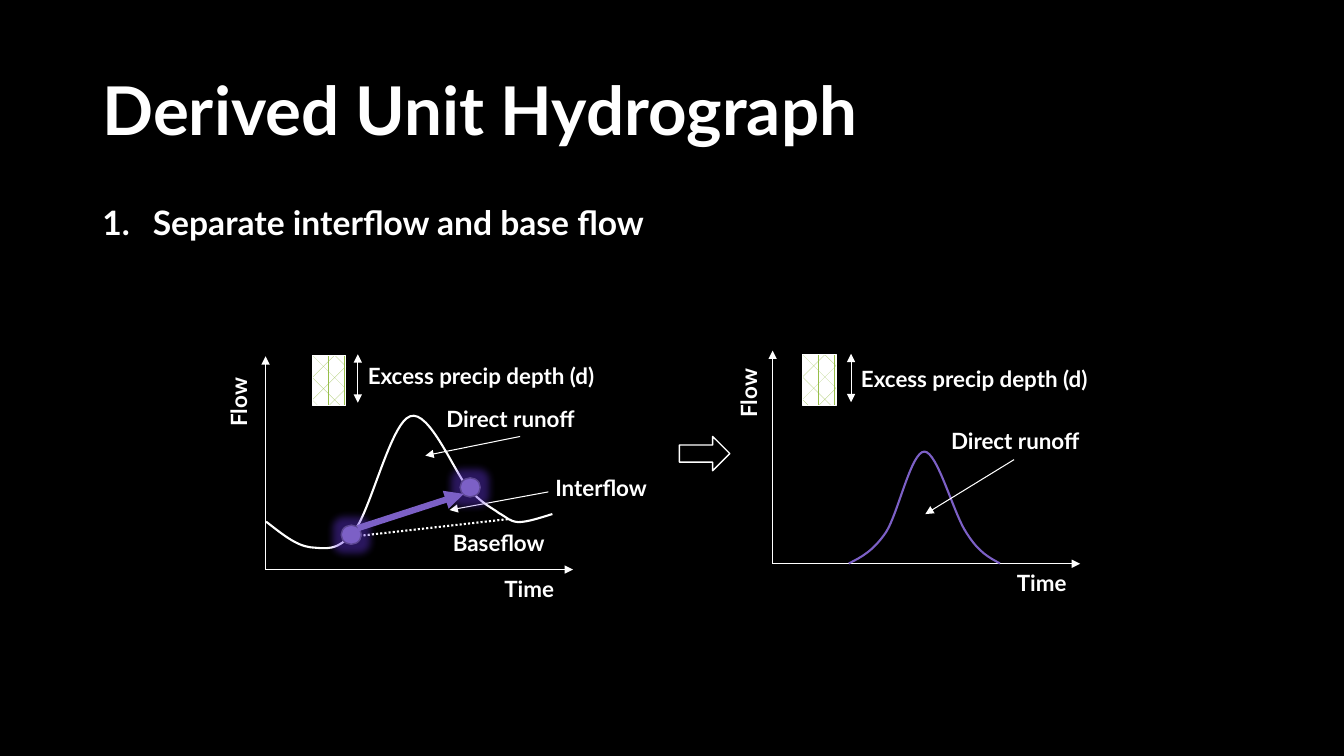
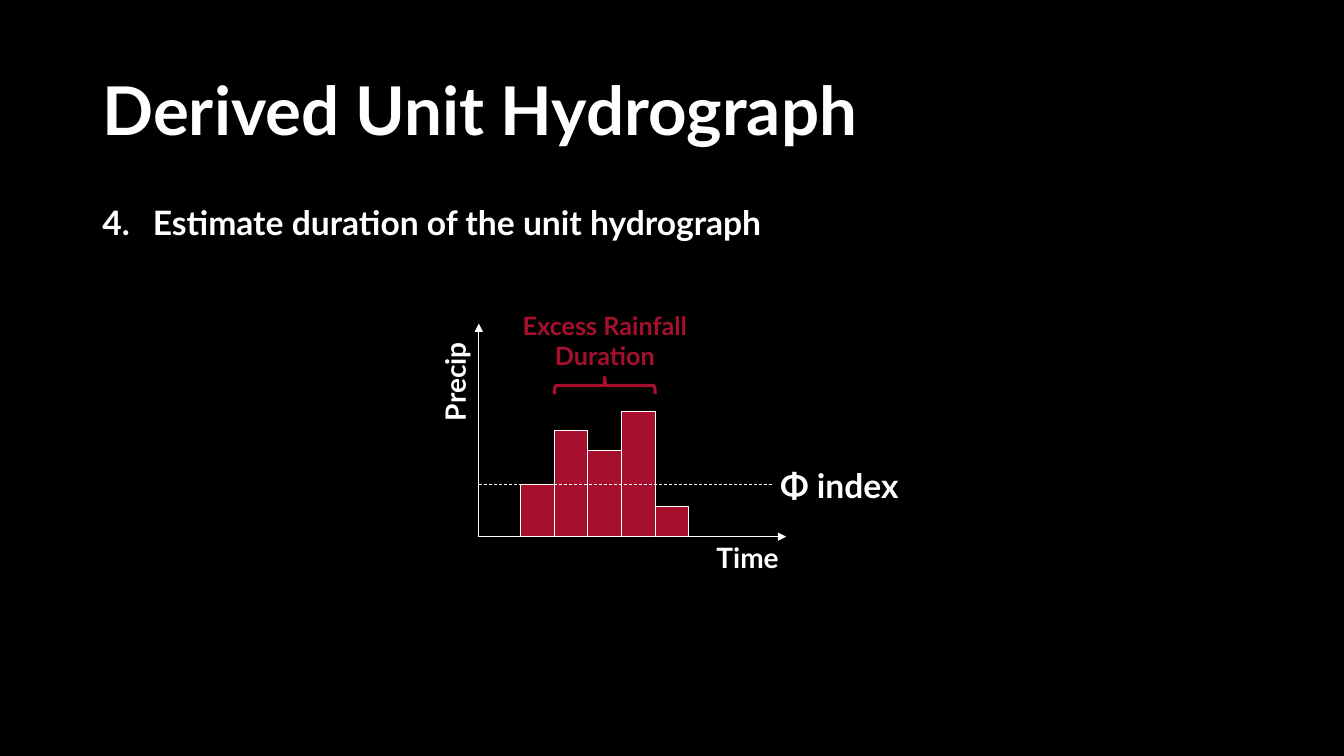
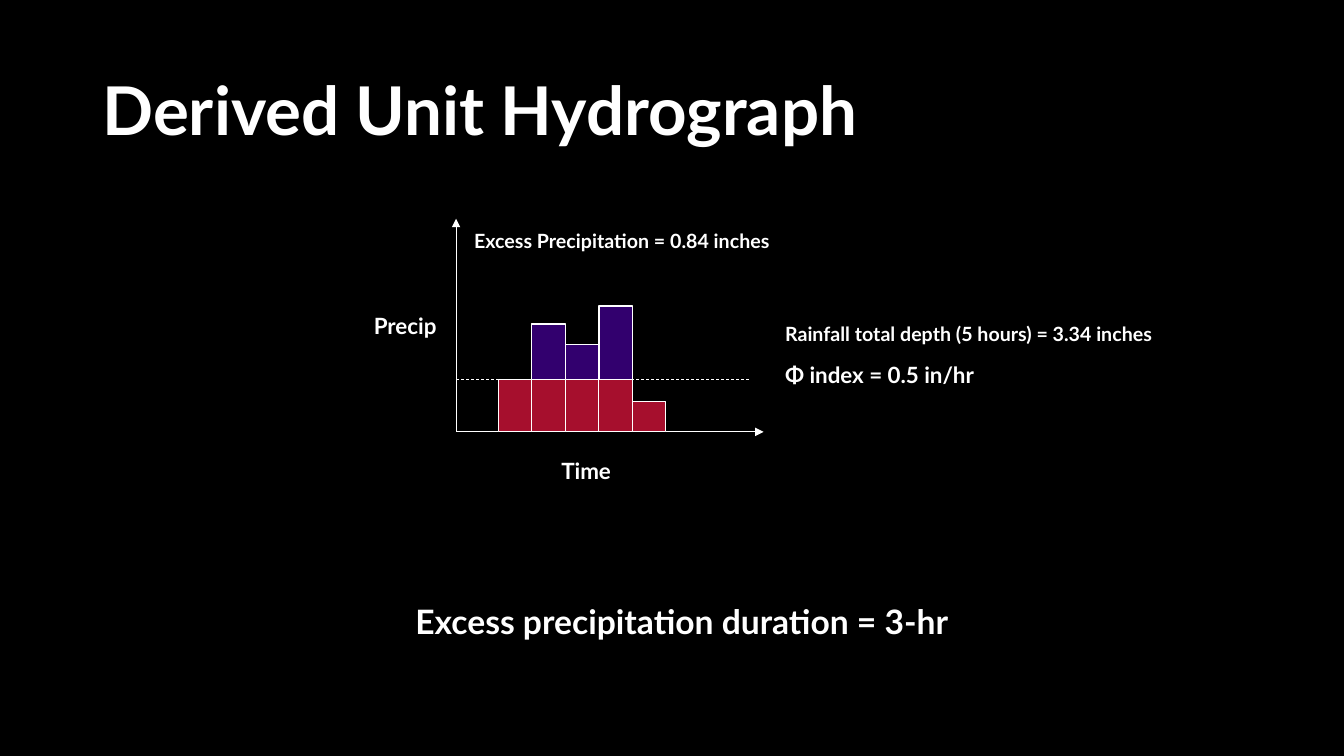
from lxml import etree
from pptx import Presentation
from pptx.dml.color import RGBColor
from pptx.enum.dml import MSO_LINE, MSO_PATTERN
from pptx.enum.shapes import MSO_CONNECTOR, MSO_SHAPE
from pptx.enum.text import MSO_ANCHOR, PP_ALIGN
from pptx.oxml.ns import qn
from pptx.util import Inches, Pt

BLACK = RGBColor(0x00, 0x00, 0x00)
WHITE = RGBColor(0xFF, 0xFF, 0xFF)
LEAF = RGBColor(0x97, 0xBE, 0x49)
LILAC = RGBColor(0x7C, 0x60, 0xC6)
PLUM = RGBColor(0x5C, 0x47, 0x92)
CRIMSON = RGBColor(0xA6, 0x0F, 0x2D)
PURPLE = RGBColor(0x32, 0x00, 0x6E)

STRAIGHT = MSO_CONNECTOR.STRAIGHT
RECT, DOT = MSO_SHAPE.RECTANGLE, MSO_SHAPE.OVAL
BLOCK_ARROW, BRACE = MSO_SHAPE.RIGHT_ARROW, MSO_SHAPE.RIGHT_BRACE
DASH, DOTTED = MSO_LINE.DASH, MSO_LINE.ROUND_DOT
DIVOT = MSO_PATTERN.DIVOT
LEFT, CENTER = PP_ALIGN.LEFT, PP_ALIGN.CENTER
TOP, MIDDLE = MSO_ANCHOR.TOP, MSO_ANCHOR.MIDDLE

COLUMNS, ROWS = 133.33, 75
AXIS_UP, AXIS_RIGHT = 21.15, 30.5
BAR_WIDTH, BAR_START = 3.33, 4.17
RAIN = [5.2, 10.5, 8.6, 12.4, 3.0]
PHI = 5.2


class HydrographDeck:
    """Draws hydrograph slides on a grid of 133.33 columns and 75 rows."""

    def __init__(self):
        self.prs = Presentation()
        self.prs.slide_width, self.prs.slide_height = Inches(13.33), Inches(7.5)
        backdrop = self.prs.slide_master.background.fill
        backdrop.solid()
        backdrop.fore_color.rgb = BLACK
        self.slide = None

    def grid(self, *lengths):
        width, height = self.prs.slide_width, self.prs.slide_height
        steps = (width / COLUMNS, height / ROWS)
        return [round(length * steps[i % 2]) for i, length in enumerate(lengths)]

    def add_slide(self, title):
        self.slide = self.prs.slides.add_slide(self.prs.slide_layouts[6])
        self.text(title, 9.17, 4, 115, 14.5, size=48, anchor=MIDDLE, spacing=0.9)

    def text(self, words, x, y, w, h, size=16, color=WHITE, align=LEFT,
             anchor=TOP, spacing=1.0, turn=0):
        box = self.slide.shapes.add_textbox(*self.grid(x, y, w, h))
        box.rotation = turn
        frame = box.text_frame
        frame.word_wrap, frame.vertical_anchor = True, anchor
        paragraph = frame.paragraphs[0]
        paragraph.alignment, paragraph.line_spacing = align, spacing
        run = paragraph.add_run()
        run.text = words
        font_format = {"name": "Lato", "size": Pt(size), "bold": True}
        for attribute, value in font_format.items():
            setattr(run.font, attribute, value)
        run.font.color.rgb = color
        return paragraph

    def step(self, number, words):
        paragraph = self.text(words, 9.17, 20, 115, 47.6, size=24, spacing=0.9)
        properties = paragraph._p.get_or_add_pPr()
        indent = Inches(0.5)
        properties.set("marL", str(indent))
        properties.set("indent", str(-indent))
        etree.SubElement(properties, qn("a:buFont"), typeface="Lato")
        etree.SubElement(properties, qn("a:buAutoNum"), type="arabicPeriod",
                         startAt=str(number))

    def outline(self, line, color, width):
        line.color.rgb = color
        line.width = Pt(width)

    def line(self, x1, y1, x2, y2, color=WHITE, width=0.75, dash=None, ends=()):
        link = self.slide.shapes.add_connector(STRAIGHT, *self.grid(x1, y1, x2, y2))
        self.outline(link.line, color, width)
        if dash:
            link.line.dash_style = dash
        for end in ends:
            etree.SubElement(link.line._get_or_add_ln(), qn(f"a:{end}End"), type="triangle")
        etree.SubElement(link._element.spPr, qn("a:effectLst"))

    def arrow(self, *ends, **style):
        self.line(*ends, ends=("tail",), **style)

    def shape(self, kind, x, y, w, h, fill=None, color=WHITE, width=0.75, turn=0):
        figure = self.slide.shapes.add_shape(kind, *self.grid(x, y, w, h))
        figure.rotation = turn
        figure.shadow.inherit = False
        self.outline(figure.line, color, width)
        if fill is None:
            figure.fill.background()
        else:
            figure.fill.solid()
            figure.fill.fore_color.rgb = fill
        return figure

    def glowing_dot(self, x, y):
        dot = self.shape(DOT, x, y, 2, 1.9, LILAC, PLUM, 1)
        effects = dot._element.spPr.find(qn("a:effectLst"))
        glow = etree.SubElement(effects, qn("a:glow"), rad=str(Pt(11)))
        tint = etree.SubElement(glow, qn("a:srgbClr"), val=str(LILAC))
        for adjustment, share in (("satMod", "175000"), ("alpha", "40000")):
            etree.SubElement(tint, qn(f"a:{adjustment}"), val=share)

    def curve(self, start, controls, color):
        builder = self.slide.shapes.build_freeform(*self.grid(*start), scale=1.0)
        builder.add_line_segments([self.grid(*point) for point in controls], close=False)
        flow = builder.convert_to_shape()
        segments = list(flow._element.iter(qn("a:lnTo")))
        for first in range(0, len(segments), 3):
            trio = segments[first:first + 3]
            bezier = etree.Element(qn("a:cubicBezTo"))
            trio[0].addprevious(bezier)
            for segment in trio:
                bezier.append(segment[0])
                segment.getparent().remove(segment)
        flow.fill.background()
        flow.shadow.inherit = False
        self.outline(flow.line, color, 1.5)

    def axes(self, x, base):
        self.arrow(x, base, x, base - AXIS_UP)
        self.arrow(x, base, x + AXIS_RIGHT, base)

    def flow_axes(self, x, base, flow_box, time_box):
        self.axes(x, base)
        self.text("Flow", *flow_box, 7.7, 3.7, turn=270)
        self.text("Time", *time_box, 15.8, 3.7, align=CENTER)

    def precip_depth(self, x, y, arrow_x, label_y):
        block = self.shape(RECT, x, y, 3.33, 5)
        block.fill.patterned()
        block.fill.pattern = DIVOT
        block.fill.fore_color.rgb, block.fill.back_color.rgb = LEAF, WHITE
        self.line(arrow_x, y - 0.1, arrow_x, y + 4.7, ends=("head", "tail"))
        self.text("Excess precip depth (d)", arrow_x, label_y, 25.3, 3.7)

    def bars(self, x, base, heights, fill, width=0.75):
        for i, height in enumerate(heights):
            self.shape(RECT, x + i * BAR_WIDTH, base - height, BAR_WIDTH, height,
                       fill, width=width)

    def rainfall(self, x, base):
        self.axes(x, base)
        self.bars(x + BAR_START, base, RAIN, CRIMSON)
        self.line(x, base - PHI, x + 29.2, base - PHI, width=0.5, dash=DASH)


def separate_flows(deck):
    deck.add_slide("Derived Unit Hydrograph")
    deck.step(1, "Separate interflow and base flow")

    deck.flow_axes(26.35, 56.5, (19.8, 37.6), (44.6, 56.6))
    deck.precip_depth(31, 35.25, 35.5, 35.4)
    deck.text("Baseflow", 43.95, 52, 12.5, 3.7)
    deck.text("Direct runoff", 43.3, 39.7, 15.8, 3.7)
    deck.text("Interflow", 54.1, 46.5, 11.8, 3.7)
    deck.arrow(51.6, 43.3, 42.2, 45.2)
    deck.line(34.4, 53.3, 50.4, 51.5, width=1.5, dash=DOTTED)
    deck.arrow(54.4, 48.8, 44.6, 50.6)
    deck.curve((26.4, 51.75), [
        (27.9, 52.9), (29.3, 54.1), (30.8, 54.3),
        (32.3, 54.4), (33.5, 54.8), (35.2, 52.6),
        (36.8, 50.5), (38.8, 41.9), (40.7, 41.3),
        (42.6, 40.6), (45.1, 46.9), (46.5, 48.5),
        (48, 50.1), (48.7, 50.3), (49.5, 50.9),
        (50.4, 51.4), (50.5, 51.7), (51.4, 51.8),
        (52.3, 51.8), (53.5, 51.4), (54.8, 51)], WHITE)
    for x, y in ((33.85, 52.1), (45.65, 47.4)):
        deck.glowing_dot(x, y)
    deck.arrow(35.5, 52.4, 46, 49, color=LILAC, width=4.5)

    deck.shape(BLOCK_ARROW, 67.4, 43.3, 5, 3.4, BLACK, width=1)

    deck.flow_axes(76.65, 55.93, (70.4, 36.7), (95.45, 55.95))
    deck.precip_depth(79.63, 35.2, 84.43, 35.7)
    deck.curve((84.2, 55.9), [
        (85.4, 55.3), (86.6, 54.7), (87.9, 52.8),
        (89.1, 50.9), (90.4, 44.8), (91.7, 44.8),
        (93, 44.8), (94.6, 51), (95.9, 52.9),
        (97.1, 54.8), (98.1, 55.3), (99.2, 55.9)], LILAC)
    deck.text("Direct runoff", 93.37, 41.9, 15.8, 3.7)
    deck.arrow(100.6, 45.6, 91.8, 51)


def estimate_duration(deck):
    deck.add_slide("Derived Unit Hydrograph")
    deck.step(4, "Estimate duration of the unit hydrograph")
    deck.rainfall(47.5, 53.25)
    deck.text("Time", 66.27, 53.1, 15.8, 4.4, size=20, align=CENTER)
    deck.text("Precip", 39.8, 35.2, 10.7, 4.4, size=20, turn=270)
    deck.text("Φ index", 76.4, 45.6, 15.4, 5, size=24)
    deck.text("Excess Rainfall Duration", 50.55, 30.25, 18.9, 7.1, size=18,
              color=CRIMSON, align=CENTER)
    deck.shape(BRACE, 59.15, 33.25, 1.7, 10, color=CRIMSON, width=2.25, turn=270)


def measure_excess(deck):
    deck.add_slide("Derived Unit Hydrograph")
    deck.rainfall(45.25, 42.85)
    deck.bars(45.25 + BAR_START + BAR_WIDTH, 42.85 - PHI, [5.5, 3.5, 7.3], PURPLE, width=1)
    deck.text("Time", 50.25, 44.85, 15.8, 3.7, align=CENTER)
    deck.text("Precip", 36.1, 30.45, 8.4, 3.7)
    deck.text("Rainfall total depth (5 hours) = 3.34 inches", 76.9, 31.85, 39.1, 3,
              size=14, spacing=0.8)
    deck.text("Φ index = 0.5 in/hr", 76.9, 35.3, 22.3, 3.7)
    deck.text("Excess Precipitation = 0.84 inches", 46, 22.25, 31.4, 3.4,
              size=14, align=CENTER)
    deck.text("Excess precipitation duration = 3-hr", 34.33, 59.1, 66.6, 5.9,
              size=24, align=CENTER)


def main():
    deck = HydrographDeck()
    for build in (separate_flows, estimate_duration, measure_excess):
        build(deck)
    deck.prs.save("out.pptx")


if __name__ == "__main__":
    main()
